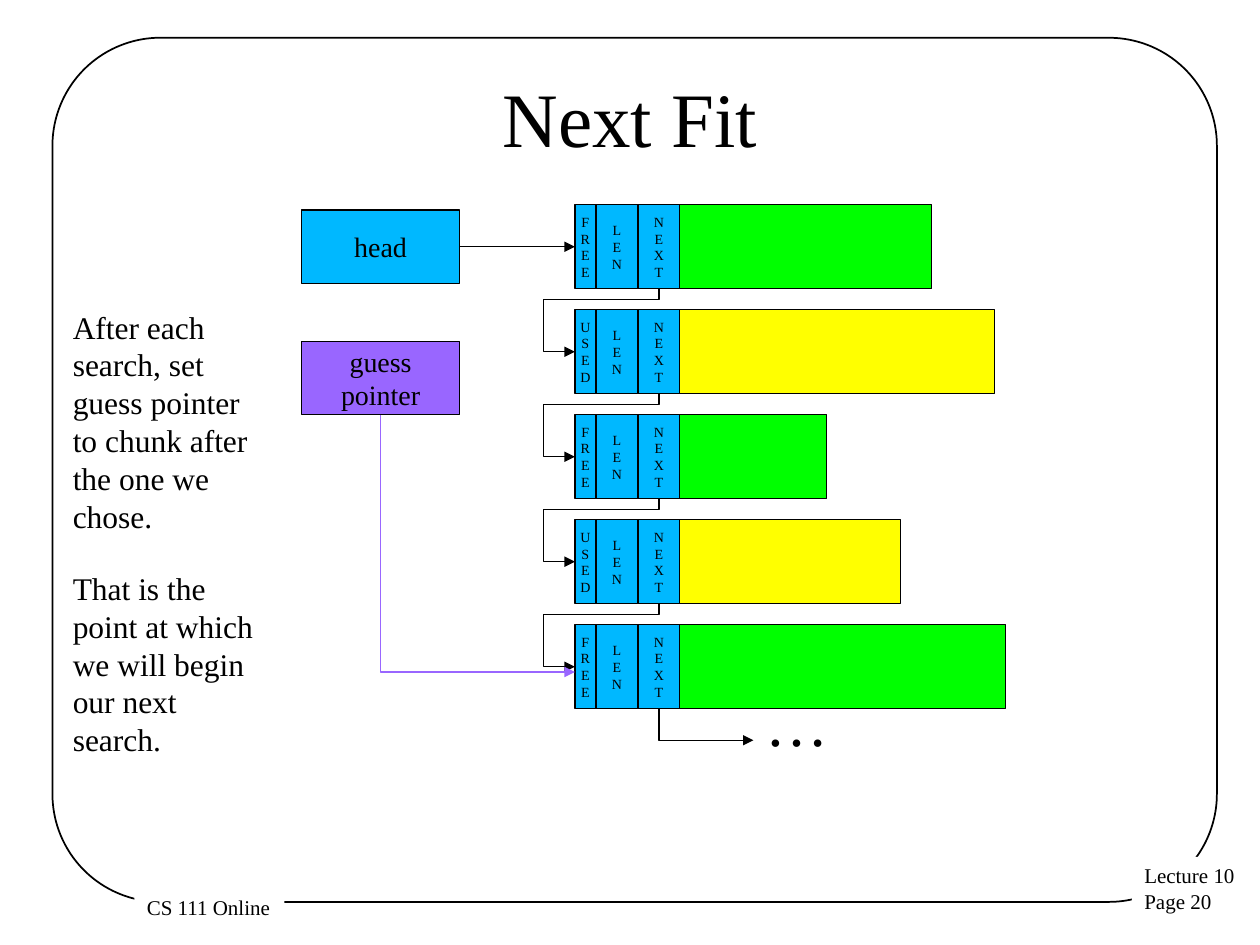
"""Build the Next Fit slide on a grid of twelfths of an inch."""
import pptx
import pptx.dml.color
import pptx.enum.dml
import pptx.enum.shapes
import pptx.enum.text
import pptx.oxml
import pptx.util

SHAPE = pptx.enum.shapes.MSO_SHAPE
LINK = pptx.enum.shapes.MSO_CONNECTOR
ALIGN = pptx.enum.text.PP_ALIGN
ANCHOR = pptx.enum.text.MSO_ANCHOR
NS = 'xmlns:a="http://schemas.openxmlformats.org/drawingml/2006/main"'

FONT = "Times New Roman"
BLACK, WHITE, BLUE, PURPLE = "000000", "FFFFFF", "00B8FF", "9966FF"
STATE_FILL = {"FREE": "00FF00", "USED": "FFFF00"}

TITLE, TITLE_BOX = "Next Fit", (6, 3.6, 108, 15)
FRAME_BOX = (5, 3.6, 110.9, 82.3)
FOOTERS = [
    ("Lecture 10\nPage 20", (107.8, 81.6, 11.2, 6.1)),
    ("CS 111 Online", (12.8, 84.6, 14.3, 3.6)),
]
POINTERS = [("head", 20, BLUE), ("guess\npointer", 32.5, PURPLE)]
CHUNKS = [("FREE", 24), ("USED", 30), ("FREE", 14), ("USED", 21), ("FREE", 31)]
NOTES = [
    ("After each search, set guess pointer to chunk after the one we chose.",
     18, (5.75, 28.7, 21, 22.8)),
    ("That is the point at which we will begin our next search.",
     18, (5.75, 53.6, 21, 19.2)),
    ("…", 36, (71.75, 64.5, 13, 8.4)),
]

POINTER_X, POINTER_W, POINTER_H = 28.75, 15, 7
CHUNK_X, CHUNK_Y, CHUNK_H, PITCH = 54.75, 19.5, 8, 10
STATE_W, FIELD_W = 2, 4
NEXT_X = CHUNK_X + STATE_W + FIELD_W * 1.5

prs = pptx.Presentation()
prs.slide_width, prs.slide_height = pptx.util.Inches(10), pptx.util.Inches(7.5)
UNIT = prs.slide_width / 120
s = prs.slides.add_slide(prs.slide_layouts[5])


def grid(*values):
    return [round(v * UNIT) for v in values]


def rgb(value):
    return pptx.dml.color.RGBColor.from_string(value)


def write(sp, text, size=16, align=ALIGN.CENTER, anchor=ANCHOR.MIDDLE, wrap=True):
    tf = sp.text_frame
    tf.word_wrap, tf.vertical_anchor = wrap, anchor
    tf.auto_size = pptx.enum.text.MSO_AUTO_SIZE.NONE
    tf.text = text
    for p in tf.paragraphs:
        p.alignment = align
        p.font.name, p.font.size = FONT, pptx.util.Pt(size)
        p.font.color.rgb = rgb(BLACK)


def box(at, fill=None, line=BLACK, width=0.75, kind=SHAPE.RECTANGLE):
    sp = s.shapes.add_shape(kind, *grid(*at))
    sp.shadow.inherit = False
    if fill:
        sp.fill.solid()
        sp.fill.fore_color.rgb = rgb(fill)
    else:
        sp.fill.background()
    if line:
        sp.line.color.rgb = rgb(line)
        sp.line.width = pptx.util.Pt(width)
    else:
        sp.line.fill.background()
    return sp


def arrow(x1, y1, x2, y2, color=BLACK, preset=None, adjust=()):
    if preset:
        cx, cy = (x1 + x2) / 2, (y1 + y2) / 2
        w, h = abs(y2 - y1) / 2, abs(x2 - x1) / 2
        flip = 1 if x2 > x1 else -1
        ends = cx + flip * w, cy - h, cx - flip * w, cy + h
        c = s.shapes.add_connector(LINK.ELBOW, *grid(*ends))
        c._element.spPr.xfrm.set("rot", str((270 if flip > 0 else 90) * 60000))
        geom = c._element.spPr.prstGeom
        geom.set("prst", preset)
        for i, value in enumerate(adjust, 1):
            geom.get_or_add_avLst().append(pptx.oxml.parse_xml(
                f'<a:gd {NS} name="adj{i}" fmla="val {value}"/>'))
    else:
        c = s.shapes.add_connector(LINK.STRAIGHT, *grid(x1, y1, x2, y2))
    c.line.color.rgb = rgb(color)
    c.line.width = pptx.util.Pt(0.75)
    c.line._get_or_add_ln().append(pptx.oxml.parse_xml(f'<a:tailEnd {NS} type="triangle"/>'))
    c._element.spPr.append(pptx.oxml.parse_xml(f"<a:effectLst {NS}/>"))


box(FRAME_BOX, width=1, kind=SHAPE.ROUNDED_RECTANGLE).adjustments[0] = 0.125
for text, at in FOOTERS:
    write(box(at, WHITE, None), text, size=12, align=ALIGN.LEFT, anchor=ANCHOR.TOP, wrap=False)

title = s.shapes.title
title.left, title.top, title.width, title.height = grid(*TITLE_BOX)
write(title, TITLE, size=44)

for text, y, fill in POINTERS:
    write(box((POINTER_X, y, POINTER_W, POINTER_H), fill), text, wrap=False)

for row, (state, body_w) in enumerate(CHUNKS):
    x, y = CHUNK_X, CHUNK_Y + row * PITCH
    for word, w in ((state, STATE_W), ("LEN", FIELD_W), ("NEXT", FIELD_W)):
        write(box((x, y, w, CHUNK_H), BLUE), "\n".join(word), size=8, wrap=False)
        x += w
    box((x, y, body_w, CHUNK_H), STATE_FILL[state])
    if row:
        arrow(NEXT_X, y - PITCH + CHUNK_H, CHUNK_X, y + CHUNK_H / 2,
              preset="bentConnector4", adjust=(16667, 137500))

bottom = y + CHUNK_H
head_y, guess_y = (top for _, top, _ in POINTERS)
arrow(POINTER_X + POINTER_W, head_y + POINTER_H / 2, CHUNK_X, head_y + POINTER_H / 2)
arrow(NEXT_X, bottom, NEXT_X + 9, bottom + 3, preset="bentConnector2")
arrow(POINTER_X + POINTER_W / 2, guess_y + POINTER_H, CHUNK_X, y + 4.5,
      color=PURPLE, preset="bentConnector2")

for text, size, at in NOTES:
    write(s.shapes.add_textbox(*grid(*at)), text, size=size, align=ALIGN.LEFT, anchor=ANCHOR.TOP)

prs.save("out.pptx")
